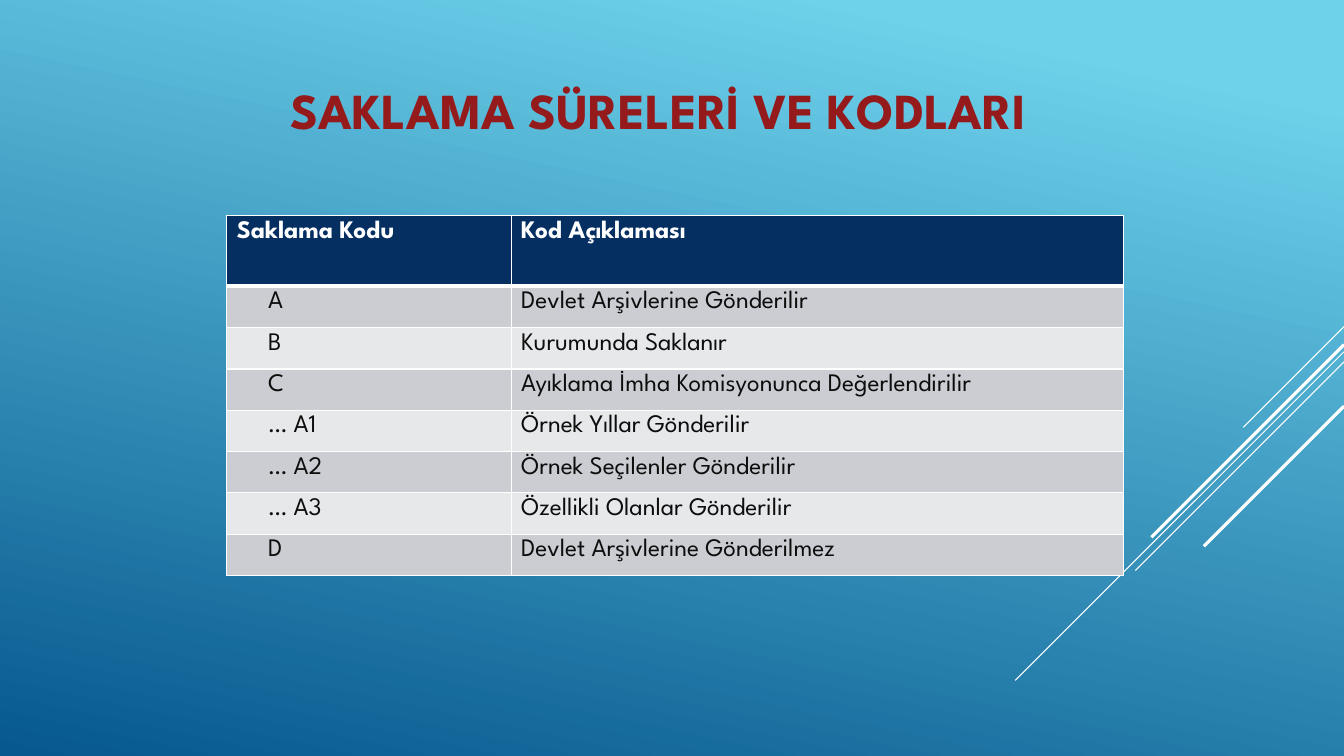
from lxml import etree
from pptx import Presentation
from pptx.dml.color import RGBColor
from pptx.enum import shapes, text
from pptx.oxml import ns
from pptx.util import Inches, Pt

COLORS = {
    "sky": "6ED2EB",
    "deep": "06588E",
    "title": "941A1B",
    "header": "052F61",
    "odd": "CCCDD2",
    "even": "E7E8EA",
    "ink": "0D0D0D",
    "white": "FFFFFF",
}

CODES = [
    ("A", "Devlet Arşivlerine Gönderilir"),
    ("B", "Kurumunda Saklanır"),
    ("C", "Ayıklama İmha Komisyonunca Değerlendirilir"),
    ("… A1", "Örnek Yıllar Gönderilir"),
    ("… A2", "Örnek Seçilenler Gönderilir"),
    ("… A3", "Özellikli Olanlar Gönderilir"),
    ("D", "Devlet Arşivlerine Gönderilmez"),
]

RAYS = [
    (3.24, 1.0, 0.75),
    (3.49, 3.26, 0.75),
    (3.59, 2.07, 0.75),
    (3.42, 1.91, 2.25),
    (4.03, 1.39, 2.25),
]


class SlideBuilder:
    font = "League Spartan"

    def __init__(self, slide):
        self.slide = slide

    def color(self, name):
        return RGBColor.from_string(COLORS[name])

    def background(self, angle, stops):
        fill = self.slide.background.fill
        fill.gradient()
        fill.gradient_angle = angle
        for stop, (position, name) in zip(fill.gradient_stops, stops):
            stop.position = position
            stop.color.rgb = self.color(name)

    def style(self, frame, size, name, bold):
        for paragraph in frame.paragraphs:
            paragraph.alignment = text.PP_ALIGN.LEFT
            for run in paragraph.runs:
                run.font.name = self.font
                run.font.size = Pt(size)
                run.font.bold = bold
                run.font.color.rgb = self.color(name)

    def title(self, wording, left, top, width, height):
        heading = self.slide.shapes.title
        heading.left, heading.top = Inches(left), Inches(top)
        heading.width, heading.height = Inches(width), Inches(height)
        frame = heading.text_frame
        frame.text = wording
        frame.word_wrap = True
        frame.auto_size = text.MSO_AUTO_SIZE.SHAPE_TO_FIT_TEXT
        frame.vertical_anchor = text.MSO_ANCHOR.TOP
        self.style(frame, 36, "title", True)

    def ray(self, top, reach, weight):
        right = 13.33
        line = self.slide.shapes.add_connector(
            shapes.MSO_CONNECTOR.STRAIGHT,
            Inches(right), Inches(top), Inches(right - reach), Inches(top + reach),
        )
        line.line.color.rgb = self.color("white")
        line.line.width = Pt(weight)
        etree.SubElement(line._element.spPr, ns.qn("a:effectLst"))

    def borders(self, cell, weights):
        properties = cell._tc.get_or_add_tcPr()
        for index, (side, weight) in enumerate(weights.items()):
            edge = etree.Element(ns.qn(f"a:ln{side}"), w=str(Pt(weight)))
            fill = etree.SubElement(edge, ns.qn("a:solidFill"))
            etree.SubElement(fill, ns.qn("a:srgbClr"), val=COLORS["white"])
            properties.insert(index, edge)

    def cell(self, cell, wording, fill, ink, bold, weights):
        cell.text_frame.text = wording
        cell.fill.solid()
        cell.fill.fore_color.rgb = self.color(fill)
        self.style(cell.text_frame, 18, ink, bold)
        self.borders(cell, weights)

    def table(self, header, rows, left, top, widths, header_height, row_height):
        height = header_height + row_height * len(rows)
        grid = self.slide.shapes.add_table(
            len(rows) + 1, len(widths),
            Inches(left), Inches(top), Inches(sum(widths)), Inches(height),
        ).table
        for column, width in zip(grid.columns, widths):
            column.width = Inches(width)
        for index, wordings in enumerate([header, *rows]):
            is_header = index == 0
            grid.rows[index].height = Inches(header_height if is_header else row_height)
            fill = "header" if is_header else "odd" if index % 2 else "even"
            ink = "white" if is_header else "ink"
            weights = {"L": 1, "R": 1, "T": 3 if index == 1 else 1, "B": 3 if is_header else 1}
            for column, wording in enumerate(wordings):
                cell = grid.cell(index, column)
                self.cell(cell, wording, fill, ink, is_header, weights)
                if column == 0 and not is_header:
                    cell.margin_left = Inches(0.41)


def main():
    deck = Presentation()
    deck.slide_width, deck.slide_height = Inches(13.33), Inches(7.5)
    builder = SlideBuilder(deck.slides.add_slide(deck.slide_layouts[5]))
    builder.background(258, [(0.1, "sky"), (1, "deep")])
    for ray in RAYS:
        builder.ray(*ray)
    builder.title("SAKLAMA SÜRELERİ VE KODLARI", 2.78, 0.73, 8.59, 0.71)
    builder.table(
        ("Saklama Kodu", "Kod Açıklaması"), CODES,
        2.25, 2.14, (2.82, 6.07), 0.7, 0.41,
    )
    deck.save("out.pptx")


if __name__ == "__main__":
    main()
